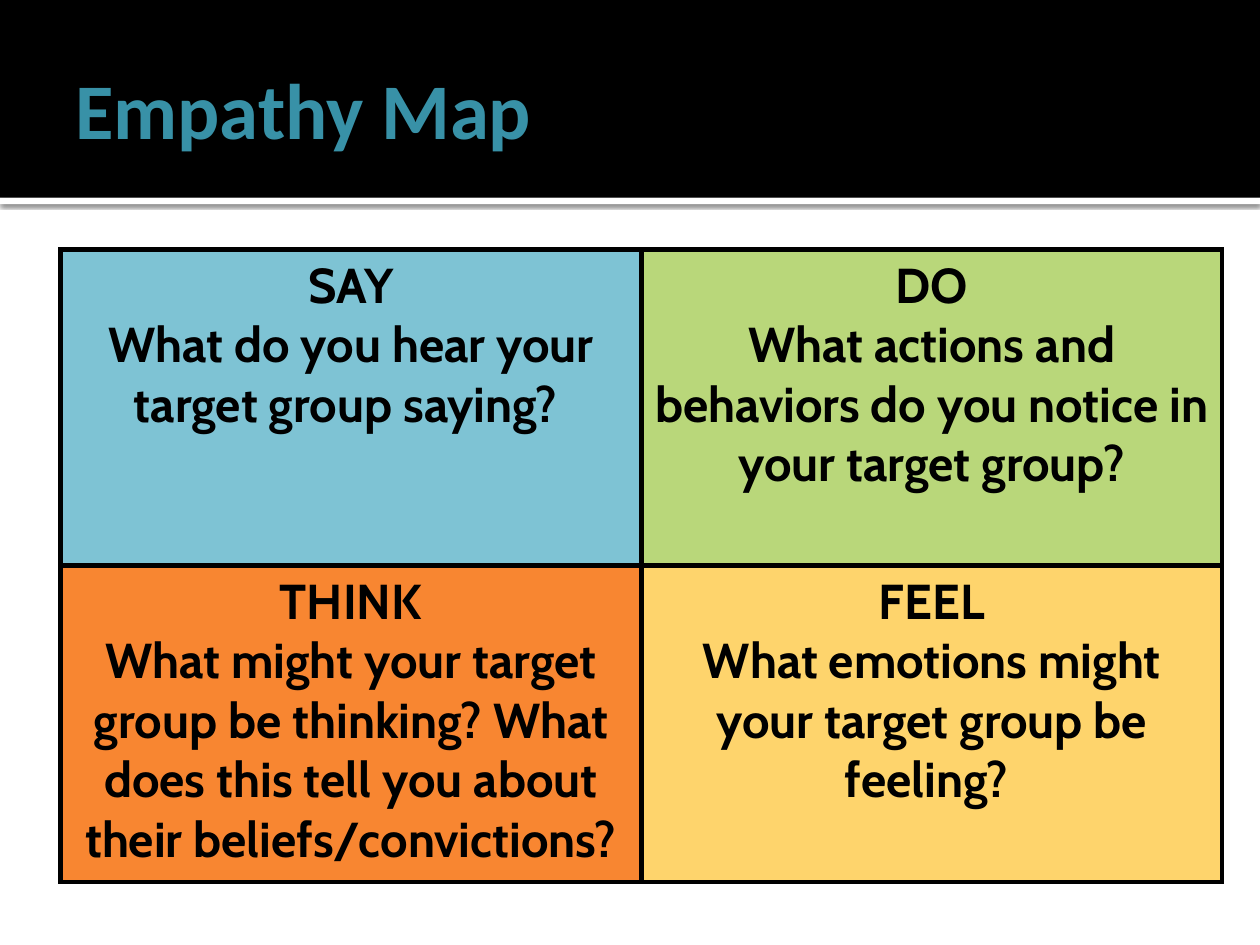
from dataclasses import dataclass

from lxml.etree import SubElement
from pptx import Presentation
from pptx.dml.color import RGBColor
from pptx.enum.shapes import MSO_SHAPE
from pptx.enum.text import MSO_ANCHOR, PP_ALIGN
from pptx.oxml.ns import qn
from pptx.util import Inches, Pt


@dataclass
class Box:
    """Place and size in inches."""
    left: float
    top: float
    width: float
    height: float

    def spans(self) -> list:
        """Give the four lengths in order."""
        return [Inches(n) for n in (self.left, self.top, self.width, self.height)]


@dataclass
class Panel:
    """One quarter of the map."""
    head: str
    ask: str
    fill: str


GRID = [
    [Panel("SAY", "What do you hear your target group saying? ", "7EC3D4"),
     Panel("DO", "What actions and behaviors do you notice in your target group?", "B9D77A")],
    [Panel("THINK", "What might your target group be thinking? What does this tell "
                    "you about their beliefs/convictions?", "F88631"),
     Panel("FEEL", "What emotions might your target group be feeling? ", "FED46C")],
]


def paint(fill, color: str) -> None:
    """Set a solid fill."""
    fill.solid()
    fill.fore_color.rgb = RGBColor.from_string(color)


def write(frame, *lines: str, size: float, font: str, color: str = "000000",
          align=PP_ALIGN.LEFT) -> None:
    """Write bold lines, one to a paragraph."""
    for i, line in enumerate(lines):
        para = frame.add_paragraph() if i else frame.paragraphs[0]
        para.alignment = align
        run = para.add_run()
        run.text = line
        run.font.size = Pt(size)
        run.font.name = font
        run.font.bold = True
        run.font.color.rgb = RGBColor.from_string(color)


def band(slide, box: Box, color: str):
    """Draw a plain bar."""
    shape = slide.shapes.add_shape(MSO_SHAPE.RECTANGLE, *box.spans())
    shape.shadow.inherit = False
    paint(shape.fill, color)
    shape.line.fill.background()
    return shape


def shade(shape, blur: float, dist: float, alpha: int) -> None:
    """Cast a black shadow downward."""
    effect = shape.element.spPr.find(qn("a:effectLst"))
    outer = SubElement(effect, qn("a:outerShdw"), blurRad=str(Pt(blur)),
                       dist=str(Pt(dist)), dir="5400000", algn="tl", rotWithShape="0")
    tone = SubElement(outer, qn("a:srgbClr"), val="000000")
    SubElement(tone, qn("a:alpha"), val=str(alpha * 1000))


def edge(cell, width: float, color: str) -> None:
    """Line all four sides of a cell."""
    props = cell._tc.get_or_add_tcPr()
    for side in "LRTB":
        line = SubElement(props, qn(f"a:ln{side}"), w=str(Pt(width)))
        solid = SubElement(line, qn("a:solidFill"))
        SubElement(solid, qn("a:srgbClr"), val=color)


def title(slide, box: Box, text: str) -> None:
    """Add the heading."""
    frame = slide.shapes.add_textbox(*box.spans()).text_frame
    frame.word_wrap = True
    frame.vertical_anchor = MSO_ANCHOR.MIDDLE
    frame.margin_right = Inches(0.05)
    write(frame, text, size=45, font="Calibri", color="3891A7")


def chart(slide, box: Box, grid: list[list[Panel]]) -> None:
    """Add the table of panels."""
    table = slide.shapes.add_table(len(grid), len(grid[0]), *box.spans()).table
    for r, row in enumerate(grid):
        for c, panel in enumerate(row):
            cell = table.cell(r, c)
            edge(cell, 3, "000000")
            paint(cell.fill, panel.fill)
            write(cell.text_frame, panel.head, panel.ask, size=28, font="Cabin",
                  align=PP_ALIGN.CENTER)


def main() -> None:
    """Build and save the slide."""
    deck = Presentation()
    deck.slide_width, deck.slide_height = Inches(10), Inches(7.5)
    slide = deck.slides.add_slide(deck.slide_layouts[6])
    shade(band(slide, Box(0, 1.57, 10, 0.05), "FFFFFF"), blur=2.5, dist=0.8, alpha=60)
    band(slide, Box(0, 0, 10, 1.57), "000000")
    title(slide, Box(0.5, 0.17, 9, 1.37), "Empathy Map")
    chart(slide, Box(0.48, 1.98, 9.22, 5.02), GRID)
    deck.save("out.pptx")


if __name__ == "__main__":
    main()
